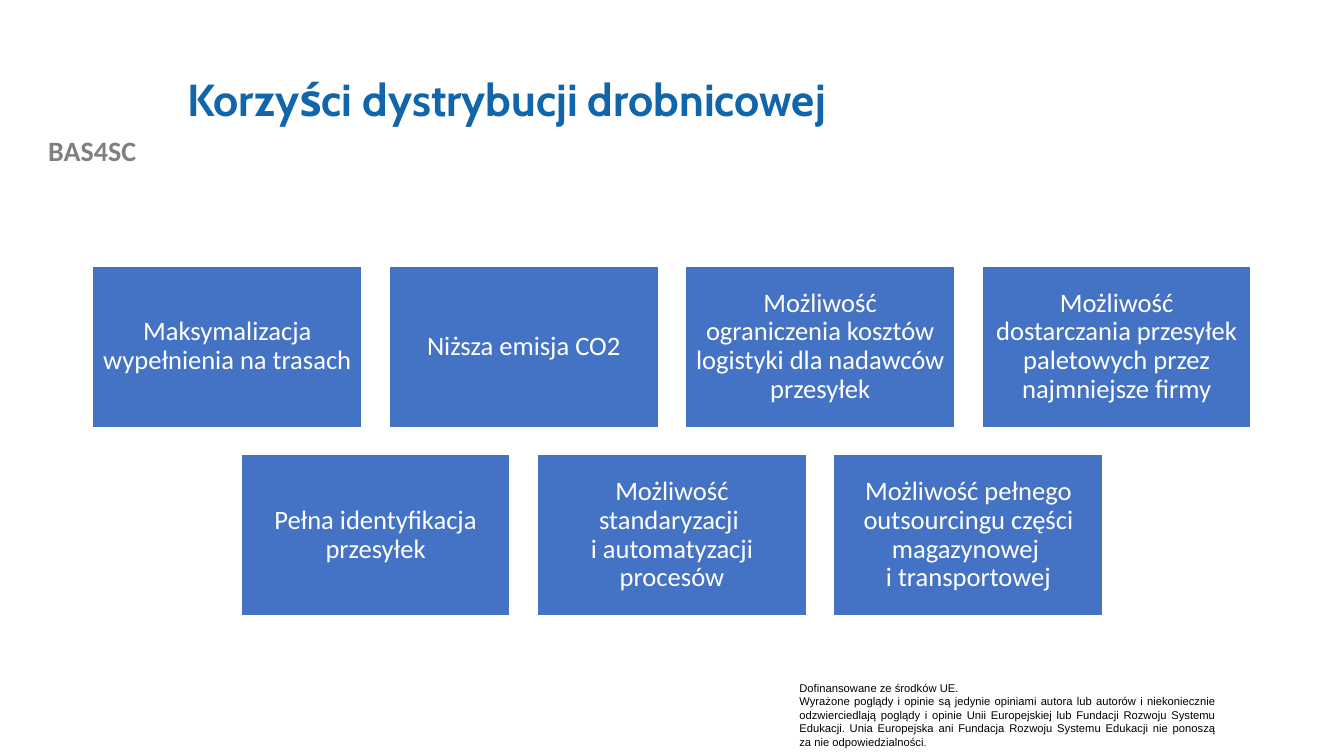
from dataclasses import dataclass

from pptx import Presentation
from pptx.dml.color import RGBColor
from pptx.enum.shapes import MSO_SHAPE
from pptx.enum.text import MSO_ANCHOR, MSO_AUTO_SIZE, PP_ALIGN
from pptx.util import Inches, Pt

RECTANGLE = MSO_SHAPE.RECTANGLE
MIDDLE, TOP = MSO_ANCHOR.MIDDLE, MSO_ANCHOR.TOP
LEFT, CENTER, JUSTIFY = PP_ALIGN.LEFT, PP_ALIGN.CENTER, PP_ALIGN.JUSTIFY
NO_AUTOFIT = MSO_AUTO_SIZE.NONE

PAGE_WIDTH, PAGE_HEIGHT = 13.33, 7.5
CARD_WIDTH, CARD_HEIGHT, CARD_GAP = 2.67, 1.6, 0.27
CARDS_TOP = 2.64
CARD_INSET = 0.08


@dataclass(frozen=True)
class TextStyle:
    font: str
    size: float
    color: str
    bold: bool = False
    align: PP_ALIGN = LEFT
    spacing: float = 1.0


@dataclass(frozen=True)
class Area:
    left: float
    top: float
    width: float
    height: float

    def lengths(self) -> tuple:
        return tuple(Inches(n) for n in (self.left, self.top, self.width, self.height))


TITLE_STYLE = TextStyle("Cabin", 32, "1065AB", bold=True, spacing=0.9)
PROJECT_STYLE = TextStyle("Calibri", 20, "808080", bold=True, align=CENTER)
NOTICE_STYLE = TextStyle("Arial", 8, "000000", align=JUSTIFY)
CARD_STYLE = TextStyle("Calibri", 19, "FFFFFF", align=CENTER, spacing=0.9)

NOTICE = [
    "Dofinansowane ze środków UE.",
    "Wyrażone poglądy i opinie są jedynie opiniami autora lub autorów i niekoniecznie "
    "odzwierciedlają poglądy i opinie Unii Europejskiej lub Fundacji Rozwoju Systemu "
    "Edukacji. Unia Europejska ani Fundacja Rozwoju Systemu Edukacji nie ponoszą za "
    "nie odpowiedzialności",
]

BENEFIT_ROWS = [
    [
        "Maksymalizacja wypełnienia na trasach",
        "Niższa emisja CO2",
        "Możliwość ograniczenia kosztów logistyki dla nadawców przesyłek",
        "Możliwość dostarczania przesyłek paletowych przez najmniejsze firmy",
    ],
    [
        "Pełna identyfikacja przesyłek",
        "Możliwość standaryzacji \vi automatyzacji procesów",
        "Możliwość pełnego outsourcingu części magazynowej \vi transportowej",
    ],
]


def rgb(color: str) -> RGBColor:
    return RGBColor.from_string(color)


def format_span(span, style: TextStyle) -> None:
    values = {"name": style.font, "size": Pt(style.size), "bold": style.bold}
    for name, value in values.items():
        setattr(span.font, name, value)
    span.font.color.rgb = rgb(style.color)


def write(frame, texts: list[str], style: TextStyle, anchor: MSO_ANCHOR = TOP) -> None:
    """Fill a text frame with one paragraph per text."""
    values = {"word_wrap": True, "auto_size": NO_AUTOFIT, "vertical_anchor": anchor}
    for name, value in values.items():
        setattr(frame, name, value)
    for index, text in enumerate(texts):
        para = frame.add_paragraph() if index else frame.paragraphs[0]
        para.text = text
        para.alignment = style.align
        para.line_spacing = style.spacing
        for span in para.runs:
            format_span(span, style)


def add_title(page, text: str) -> None:
    title = page.shapes.title
    title.left, title.top, title.width, title.height = Area(1.76, 0.4, 10.66, 1.22).lengths()
    write(title.text_frame, [text], TITLE_STYLE, MIDDLE)


def add_text(page, area: Area, texts: list[str], style: TextStyle):
    box = page.shapes.add_textbox(*area.lengths())
    write(box.text_frame, texts, style)
    return box


def add_card(page, area: Area, text: str) -> None:
    card = page.shapes.add_shape(RECTANGLE, *area.lengths())
    card.shadow.inherit = False
    card.fill.solid()
    card.fill.fore_color.rgb = rgb("4472C4")
    card.line.color.rgb = rgb("FFFFFF")
    card.line.width = Pt(1)
    for side in ("left", "top", "right", "bottom"):
        setattr(card.text_frame, f"margin_{side}", Inches(CARD_INSET))
    write(card.text_frame, [text], CARD_STYLE, MIDDLE)


def add_benefits(page) -> None:
    """Lay out the cards in rows, each centred on the page."""
    for row, benefits in enumerate(BENEFIT_ROWS):
        row_width = len(benefits) * (CARD_WIDTH + CARD_GAP) - CARD_GAP
        row_left = (PAGE_WIDTH - row_width) / 2
        top = CARDS_TOP + row * (CARD_HEIGHT + CARD_GAP)
        for column, benefit in enumerate(benefits):
            left = row_left + column * (CARD_WIDTH + CARD_GAP)
            add_card(page, Area(left, top, CARD_WIDTH, CARD_HEIGHT), benefit)


def main() -> None:
    deck = Presentation()
    deck.slide_width, deck.slide_height = Inches(PAGE_WIDTH), Inches(PAGE_HEIGHT)
    page = deck.slides.add_slide(deck.slide_layouts.get_by_name("Title Only"))

    add_title(page, "Korzyści dystrybucji drobnicowej")
    add_text(page, Area(0, 1.28, 1.83, 0.44), ["BAS4SC"], PROJECT_STYLE)
    notice = add_text(page, Area(7.83, 6.71, 4.33, 0.77), NOTICE, NOTICE_STYLE)
    full_stop = notice.text_frame.paragraphs[-1].add_run()
    full_stop.text = "."
    format_span(full_stop, TextStyle("Arial", 7, "000000"))
    add_benefits(page)

    deck.save("out.pptx")


if __name__ == "__main__":
    main()
